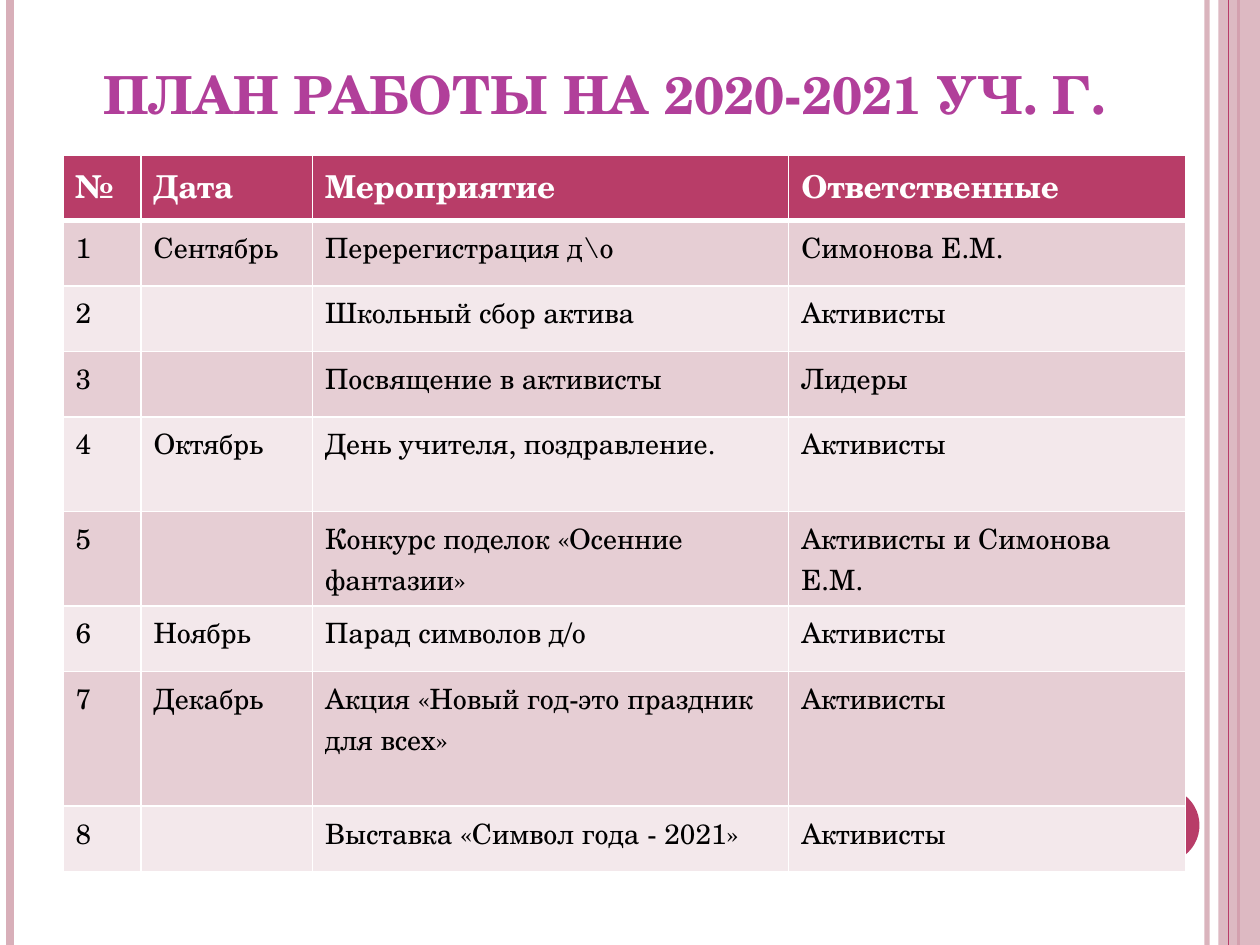
from lxml import etree
from pptx import Presentation
from pptx.dml.color import RGBColor
from pptx.enum.shapes import MSO_CONNECTOR, MSO_SHAPE
from pptx.enum.text import MSO_ANCHOR, PP_ALIGN
from pptx.oxml import parse_xml
from pptx.oxml.ns import nsdecls, qn
from pptx.util import Inches, Pt

COLORS = {
    "white": "FFFFFF", "black": "000000", "rose": "D8AFB9", "berry": "B83D68",
    "title": "B13F9A", "odd": "E6CED4", "even": "F3E8EB",
}
HEAD = {"size": Pt(18), "bold": True}
BODY = {"size": Pt(16), "bold": False}
TITLE = {"size": Pt(30), "bold": True}


class Deck:
    font = "TeX Gyre Schola"

    def __init__(self, width, height):
        self.prs = Presentation()
        self.prs.slide_width = Inches(width)
        self.prs.slide_height = Inches(height)
        self.slide = self.prs.slides.add_slide(self.prs.slide_layouts[6])

    def color(self, name):
        return RGBColor.from_string(COLORS[name])

    def fade(self, part, alpha):
        for node in part.iter(qn("a:srgbClr")):
            etree.SubElement(node, qn("a:alpha")).set("val", str(alpha * 1000))

    def label(self, frame, text, color, style):
        run = frame.paragraphs[0].add_run()
        run.text = text
        for key, value in style.items():
            setattr(run.font, key, value)
        run.font.name = self.font
        run.font.color.rgb = self.color(color)

    def stripe(self, x, color, weight, alpha=100):
        line = self.slide.shapes.add_connector(
            MSO_CONNECTOR.STRAIGHT, Inches(x), 0, Inches(x), self.prs.slide_height)
        line.line.color.rgb = self.color(color)
        line.line.width = Pt(weight)
        props = line._element.spPr
        if alpha < 100:
            self.fade(props, alpha)
        etree.SubElement(props, qn("a:effectLst"))

    def shape(self, kind, box, color, alpha=100):
        item = self.slide.shapes.add_shape(kind, *map(Inches, box))
        item.shadow.inherit = False
        item.fill.solid()
        item.fill.fore_color.rgb = self.color(color)
        item.line.fill.background()
        if alpha < 100:
            self.fade(item._element.spPr, alpha)

    def title(self, box, text):
        frame = self.slide.shapes.add_textbox(*map(Inches, box)).text_frame
        layout = {"word_wrap": True, "vertical_anchor": MSO_ANCHOR.BOTTOM,
                  "margin_top": 0, "margin_bottom": 0}
        for key, value in layout.items():
            setattr(frame, key, value)
        frame.paragraphs[0].alignment = PP_ALIGN.CENTER
        self.label(frame, text, "title", TITLE)

    def border(self, cell, widths):
        props = cell._tc.get_or_add_tcPr()
        for index, (side, weight) in enumerate(widths.items()):
            props.insert(index, parse_xml(
                f'<a:ln{side} {nsdecls("a")} w="{Pt(weight)}"><a:solidFill>'
                f'<a:srgbClr val="{COLORS["white"]}"/></a:solidFill></a:ln{side}>'))

    def table(self, left, top, cols, heights, rows):
        table = self.slide.shapes.add_table(
            len(rows), len(cols), Inches(left), Inches(top),
            Inches(sum(cols)), Inches(sum(heights))).table
        for col, width in zip(table.columns, cols):
            col.width = Inches(width)
        for r, (row, height) in enumerate(zip(rows, heights)):
            table.rows[r].height = Inches(height)
            fill = "berry" if r == 0 else ("even", "odd")[r % 2]
            color, style = ("white", HEAD) if r == 0 else ("black", BODY)
            # A thick rule parts the header from the body
            widths = {"L": 1, "R": 1, "T": 3 if r == 1 else 1, "B": 3 if r == 0 else 1}
            for c, text in enumerate(row):
                cell = table.cell(r, c)
                cell.fill.solid()
                cell.fill.fore_color.rgb = self.color(fill)
                self.border(cell, widths)
                if text:
                    self.label(cell.text_frame, text, color, style)


def main():
    deck = Deck(10, 7.5)

    # Side stripes and badge
    deck.stripe(9.58, "rose", 3, 93)
    deck.stripe(0.08, "rose", 4.5)
    deck.stripe(9.83, "berry", 1.5)
    deck.shape(MSO_SHAPE.RECTANGLE, (9.67, 0, 0.33, 7.5), "rose", 87)
    deck.stripe(9.75, "berry", 0.75)
    deck.shape(MSO_SHAPE.OVAL, (8.92, 6.25, 0.6, 0.6), "berry")

    # Heading
    deck.title((0.5, 0.3, 8.6, 0.69), "ПЛАН РАБОТЫ НА 2020-2021 УЧ. Г.")

    # Year plan
    events = [
        ("Сентябрь", "Перерегистрация д\\о", "Симонова Е.М."),
        ("", "Школьный сбор актива", "Активисты"),
        ("", "Посвящение в активисты", "Лидеры"),
        ("Октябрь", "День учителя, поздравление.", "Активисты"),
        ("", "Конкурс поделок «Осенние фантазии»", "Активисты и Симонова Е.М."),
        ("Ноябрь", "Парад символов д/о", "Активисты"),
        ("Декабрь", "Акция «Новый год-это праздник для всех»", "Активисты"),
        ("", "Выставка «Символ года - 2021»", "Активисты"),
    ]
    rows = [("№", "Дата", "Мероприятие", "Ответственные")]
    rows += [(str(n), *event) for n, event in enumerate(events, 1)]
    heights = [0.52] * 4 + [0.75] * 2 + [0.52, 1.07, 0.52]
    deck.table(0.5, 1.23, (0.62, 1.36, 3.78, 3.15), heights, rows)

    deck.prs.save("out.pptx")


if __name__ == "__main__":
    main()
